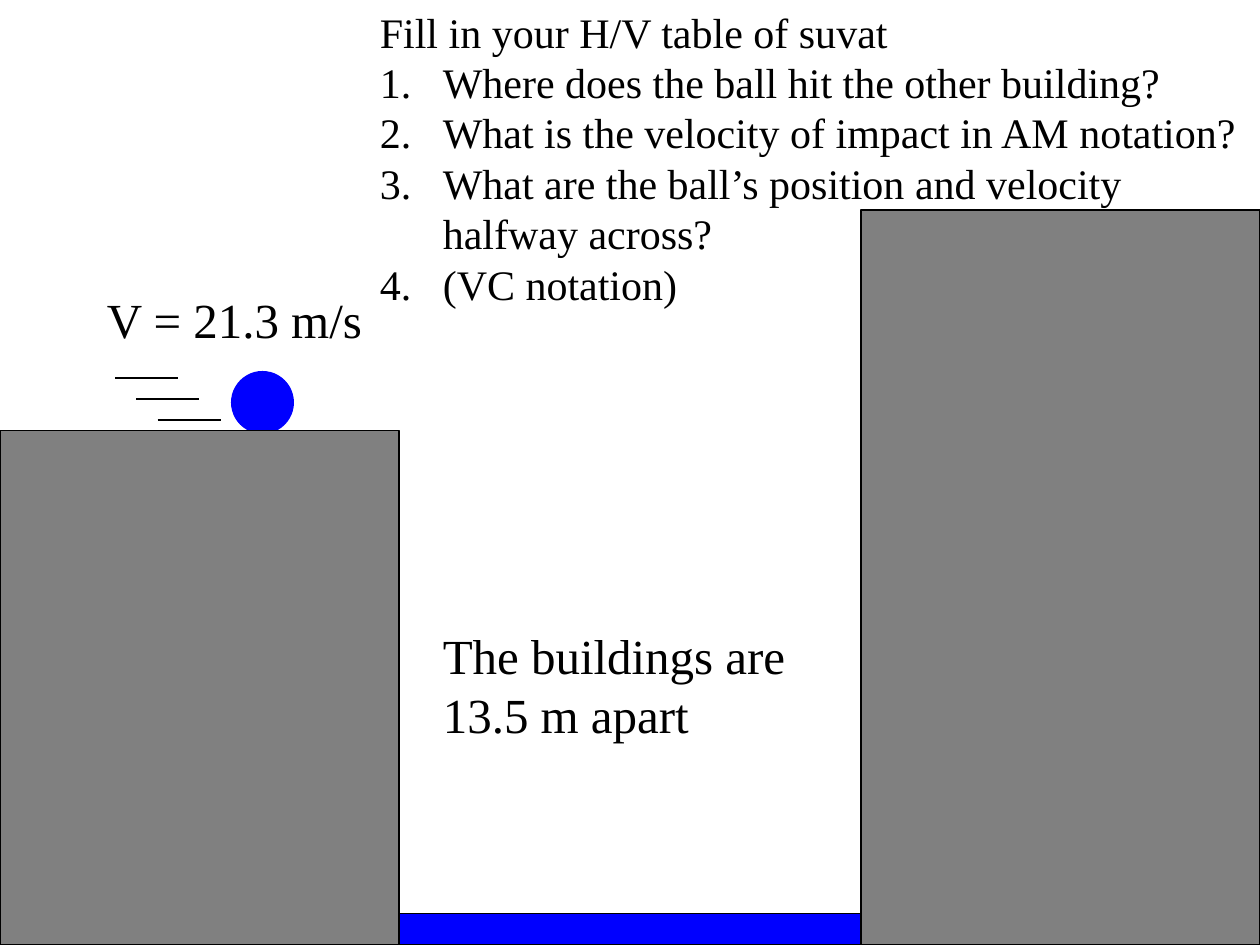
import pptx
import pptx.dml.color
import pptx.enum.shapes
import pptx.enum.text
import pptx.oxml.ns
import pptx.util
from lxml import etree

Pt = pptx.util.Pt
SHAPE = pptx.enum.shapes.MSO_SHAPE
WIDTH, HEIGHT = 720, 540
BLACK, BLUE, GRAY = "000000", "0000FF", "808080"
FONT = "Times New Roman"

SPEED = ["V = 21.3 m/s"]
GAP = ["The buildings are", "13.5 m apart"]
TASK = "Fill in your H/V table of suvat"
QUESTIONS = [
    "Where does the ball hit the other building?",
    "What is the velocity of impact in AM notation?",
    "What are the ball’s position and velocity halfway across?",
    "(VC notation)",
]

BUILDING_WIDTH = 228
LEFT_ROOF, RIGHT_ROOF = 246, 120
WATER_LEFT, WATER_TOP = 198, 522
BALL = (132, 212, 36, 36)
STREAK_LEFT, STREAK_TOP, STREAK_STEP, STREAK_LENGTH = 66, 216, 12, 36


def rgb(color):
    return pptx.dml.color.RGBColor.from_string(color)


def add_text(slide, lines, box, size=28, wrap=False, numbered_from=None):
    """Add a text box; paragraphs from index numbered_from on are numbered."""
    tf = slide.shapes.add_textbox(*map(Pt, box)).text_frame
    tf.word_wrap = wrap
    tf.auto_size = pptx.enum.text.MSO_AUTO_SIZE.SHAPE_TO_FIT_TEXT
    for i, line in enumerate(lines):
        p = tf.paragraphs[0] if i == 0 else tf.add_paragraph()
        r = p.add_run()
        r.text = line
        r.font.name, r.font.size = FONT, Pt(size)
        r.font.color.rgb = rgb(BLACK)
        if numbered_from is not None:
            pPr = p._p.get_or_add_pPr()
            pPr.set("marL", str(Pt(36)))
            pPr.set("indent", str(-Pt(36)))
            if i >= numbered_from:
                etree.SubElement(pPr, pptx.oxml.ns.qn("a:buAutoNum"), type="arabicPeriod")


def add_block(slide, kind, box, fill, line=BLACK):
    sp = slide.shapes.add_shape(kind, *map(Pt, box))
    sp.shadow.inherit = False
    sp.fill.solid()
    sp.fill.fore_color.rgb = rgb(fill)
    if line:
        sp.line.color.rgb = rgb(line)
        sp.line.width = Pt(0.75)
    else:
        sp.line.fill.background()


def add_streak(slide, x, y):
    line = slide.shapes.add_connector(
        pptx.enum.shapes.MSO_CONNECTOR.STRAIGHT,
        Pt(x), Pt(y), Pt(x + STREAK_LENGTH), Pt(y))
    line.line.color.rgb = rgb(BLACK)
    line.line.width = Pt(0.75)
    etree.SubElement(line._element.spPr, pptx.oxml.ns.qn("a:effectLst"))


def add_building(slide, left, roof):
    add_block(slide, SHAPE.RECTANGLE, (left, roof, BUILDING_WIDTH, HEIGHT - roof), GRAY)


def main():
    prs = pptx.Presentation()
    prs.slide_width, prs.slide_height = Pt(WIDTH), Pt(HEIGHT)
    slide = prs.slides.add_slide(prs.slide_layouts[6])

    add_text(slide, SPEED, (54, 162, 160.5, 41))
    add_text(slide, [TASK] + QUESTIONS, (210, 0, 510, 180),
             size=24, wrap=True, numbered_from=1)
    add_block(slide, SHAPE.RECTANGLE,
              (WATER_LEFT, WATER_TOP, WIDTH - WATER_LEFT, HEIGHT - WATER_TOP), BLUE)
    add_block(slide, SHAPE.OVAL, BALL, BLUE, line=None)
    add_building(slide, 0, LEFT_ROOF)
    for i in range(3):
        add_streak(slide, STREAK_LEFT + i * STREAK_STEP, STREAK_TOP + i * STREAK_STEP)
    add_text(slide, GAP, (246, 354, 217.5, 74))
    add_building(slide, WIDTH - BUILDING_WIDTH, RIGHT_ROOF)

    prs.save("out.pptx")


if __name__ == "__main__":
    main()
